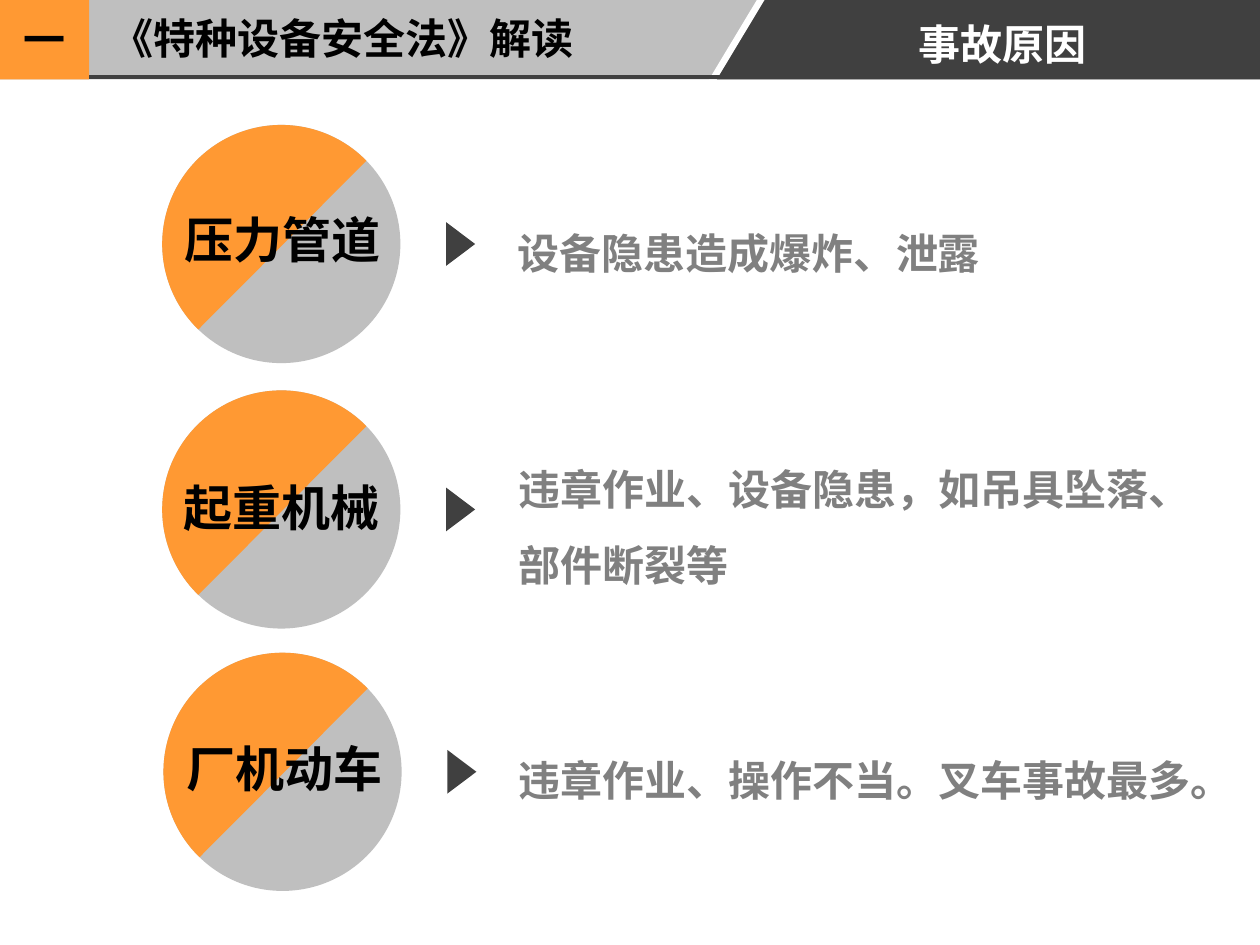
from dataclasses import dataclass

import pptx
import pptx.dml.color
import pptx.enum.shapes
import pptx.enum.text
import pptx.oxml
import pptx.oxml.ns
import pptx.util
from lxml import etree

Pt = pptx.util.Pt
Shape = pptx.enum.shapes.MSO_SHAPE
Align = pptx.enum.text.PP_ALIGN


@dataclass(frozen=True)
class Theme:
    orange: str = "FF9933"
    silver: str = "BFBFBF"
    charcoal: str = "404040"
    grey: str = "808080"
    white: str = "FFFFFF"
    black: str = "000000"
    font: str = "Noto Sans CJK SC"
    body_size: int = 24
    label_size: int = 28


@dataclass(frozen=True)
class Box:
    left: float
    top: float
    width: float
    height: float

    def lengths(self) -> tuple:
        return Pt(self.left), Pt(self.top), Pt(self.width), Pt(self.height)


@dataclass(frozen=True)
class Cause:
    equipment: str
    label_box: Box
    reason: str
    reason_box: Box
    disc_left: float
    disc_top: float


THEME = Theme()
SLIDE_WIDTH, SLIDE_HEIGHT = 720, 540
HEADER_HEIGHT = 45.4
NUMBER_WIDTH = 51
DISC_SIZE = 136.1
ARROW_LENGTH, ARROW_SPAN = 16.6, 25
ARROW_OFFSET = 162.2  # from the left of the disc to the arrow's flat side

CAUSES = (
    Cause("压力管道", Box(79.2, 115.9, 164.2, 41),
          "设备隐患造成爆炸、泄露", Box(288.9, 112.3, 425.5, 51), 92.7, 71.4),
    Cause("起重机械", Box(90.7, 269.3, 140.4, 41),
          "违章作业、设备隐患，如吊具坠落、部件断裂等",
          Box(289.3, 247, 419.8, 89.3), 92.7, 223.1),
    Cause("厂机动车", Box(95.8, 418.3, 133.9, 41),
          "违章作业、操作不当。叉车事故最多。",
          Box(289.3, 413.3, 431.3, 51), 93.4, 373),
)


def rgb(colour: str) -> pptx.dml.color.RGBColor:
    return pptx.dml.color.RGBColor.from_string(colour)


def paint(shape, colour: str) -> None:
    shape.shadow.inherit = False
    shape.fill.solid()
    shape.fill.fore_color.rgb = rgb(colour)
    shape.line.fill.background()


def add_filled(shapes, kind, box: Box, colour: str):
    shape = shapes.add_shape(kind, *box.lengths())
    paint(shape, colour)
    return shape


def add_polygon(shapes, points: list, colour: str) -> None:
    start, *rest = [(Pt(x), Pt(y)) for x, y in points]
    builder = shapes.build_freeform(*start)
    builder.add_line_segments(rest, close=True)
    paint(builder.convert_to_shape(), colour)


def add_text(shapes, text: str, box: Box, colour: str,
             size: int = THEME.body_size, align=Align.LEFT,
             line_spacing: float = 1.0, wrap: bool = True) -> None:
    frame = shapes.add_textbox(*box.lengths()).text_frame
    frame.word_wrap = wrap
    paragraph = frame.paragraphs[0]
    paragraph.text = text
    paragraph.alignment = align
    paragraph.line_spacing = line_spacing
    font = paragraph.font
    font.size, font.bold, font.name = Pt(size), True, THEME.font
    font.color.rgb = rgb(colour)
    # East Asian glyphs take their typeface from a:ea, placed after a:latin.
    latin = paragraph._p.find(".//" + pptx.oxml.ns.qn("a:latin"))
    east_asian = etree.Element(pptx.oxml.ns.qn("a:ea"), typeface=THEME.font)
    latin.addnext(east_asian)


def add_header(shapes) -> None:
    add_filled(shapes, Shape.RECTANGLE,
               Box(0, 0, SLIDE_WIDTH, HEADER_HEIGHT), THEME.silver)
    add_filled(shapes, Shape.RECTANGLE,
               Box(0, 0, NUMBER_WIDTH, HEADER_HEIGHT), THEME.orange)
    slant_top, slant_bottom, stripe = 437, 409.7, 4.5
    add_polygon(shapes, [(slant_top - stripe, 0), (slant_top, 0),
                         (slant_bottom, HEADER_HEIGHT),
                         (slant_bottom - stripe, HEADER_HEIGHT)], THEME.white)
    add_polygon(shapes, [(slant_top, 0), (SLIDE_WIDTH, 0),
                         (SLIDE_WIDTH, HEADER_HEIGHT),
                         (slant_bottom, HEADER_HEIGHT)], THEME.charcoal)

    rule_y = Pt(44)
    rule = shapes.add_connector(pptx.enum.shapes.MSO_CONNECTOR.STRAIGHT,
                                Pt(NUMBER_WIDTH), rule_y, Pt(418.3), rule_y)
    rule.line.color.rgb = rgb(THEME.charcoal)
    rule.line.width = Pt(2)
    etree.SubElement(rule._element.spPr, pptx.oxml.ns.qn("a:effectLst"))

    add_text(shapes, "一", Box(6.5, 4.3, 38.9, 36.7), THEME.black, wrap=False)
    add_text(shapes, "《特种设备安全法》解读", Box(56.9, 3.6, 282.2, 36.7),
             THEME.black, wrap=False)
    add_text(shapes, "事故原因", Box(462.2, 7.2, 221, 36.7), THEME.white,
             align=Align.CENTER)


def add_disc(shapes, box: Box) -> None:
    """Draw a silver disc whose upper-left half is orange."""
    group = shapes.add_group_shape().shapes
    add_filled(group, Shape.OVAL, box, THEME.silver)
    half = add_filled(group, Shape.CHORD, box, THEME.orange)
    half.adjustments[0], half.adjustments[1] = 53.13, 162
    half.rotation = 45.6


def add_arrow(shapes, left: float, middle: float) -> None:
    """Draw a triangle pointing right; its box is stated before the turn."""
    box = Box(left + (ARROW_LENGTH - ARROW_SPAN) / 2,
              middle - ARROW_LENGTH / 2, ARROW_SPAN, ARROW_LENGTH)
    arrow = add_filled(shapes, Shape.ISOSCELES_TRIANGLE, box, THEME.charcoal)
    arrow.rotation = 90


def add_cause(shapes, cause: Cause) -> None:
    add_disc(shapes, Box(cause.disc_left, cause.disc_top, DISC_SIZE, DISC_SIZE))
    add_arrow(shapes, cause.disc_left + ARROW_OFFSET,
              cause.disc_top + DISC_SIZE / 2)
    add_text(shapes, cause.equipment, cause.label_box, THEME.black,
             size=THEME.label_size, align=Align.CENTER)
    add_text(shapes, cause.reason, cause.reason_box, THEME.grey,
             line_spacing=1.5)


def main() -> None:
    presentation = pptx.Presentation()
    presentation.slide_width = Pt(SLIDE_WIDTH)
    presentation.slide_height = Pt(SLIDE_HEIGHT)
    slide = presentation.slides.add_slide(presentation.slide_layouts[6])
    add_header(slide.shapes)
    for cause in CAUSES:
        add_cause(slide.shapes, cause)
    presentation.save("out.pptx")


if __name__ == "__main__":
    main()
